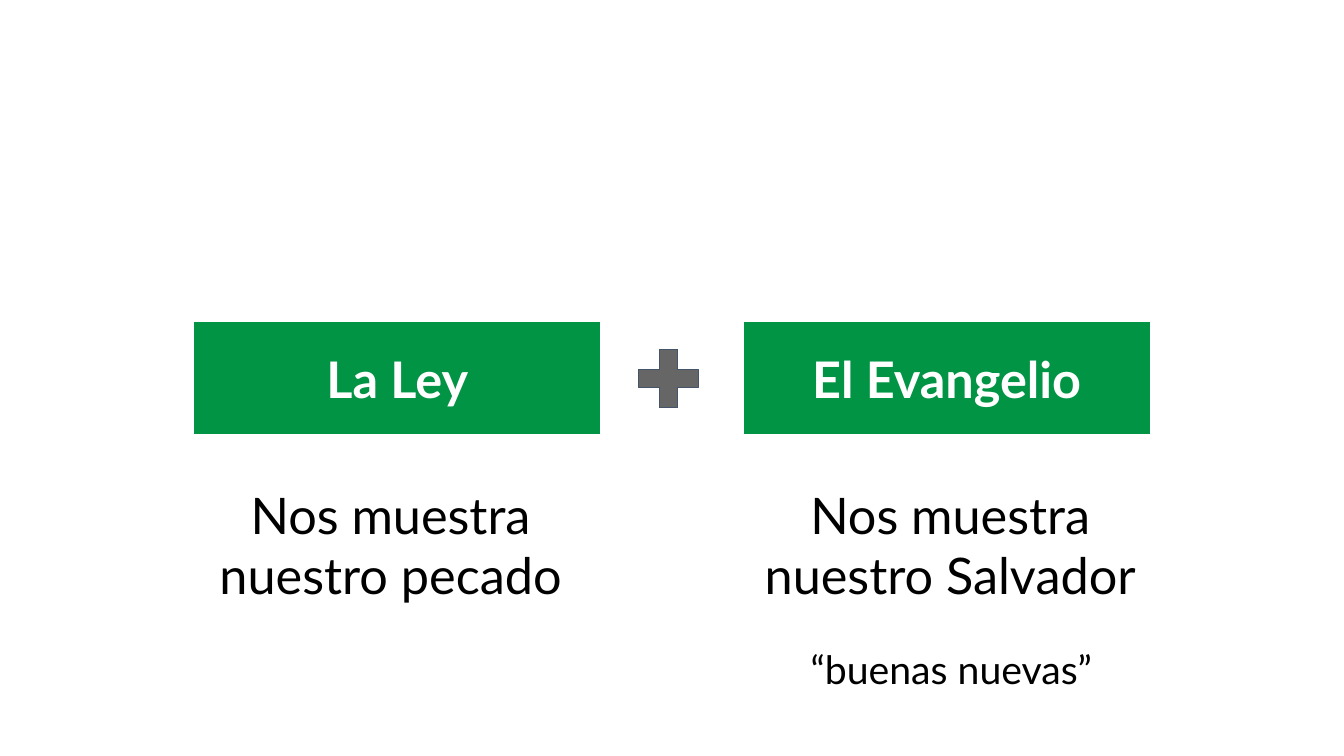
from dataclasses import dataclass
from pptx import Presentation
from pptx.dml.color import RGBColor as RGB
from pptx.enum.shapes import MSO_SHAPE as SHAPE
from pptx.enum.text import MSO_ANCHOR as ANCHOR, PP_ALIGN as ALIGN
from pptx.util import Inches, Pt


@dataclass
class Theme:
    green: RGB = RGB(0x00, 0x94, 0x44)
    gray: RGB = RGB(0x66, 0x66, 0x66)
    slate: RGB = RGB(0x44, 0x54, 0x6A)
    white: RGB = RGB(0xFF, 0xFF, 0xFF)
    black: RGB = RGB(0x00, 0x00, 0x00)
    font: str = "Lato"
    large: Pt = Pt(36)
    small: Pt = Pt(28)


theme = Theme()


def paint(shape, fill, line):
    shape.shadow.inherit = False
    shape.fill.solid()
    shape.fill.fore_color.rgb = fill
    shape.line.color.rgb = line
    shape.line.width = Pt(0.75)


def write(shape, text, size, color, anchor=ANCHOR.TOP, bold=False):
    frame = shape.text_frame
    frame.word_wrap = True
    frame.vertical_anchor = anchor
    frame.margin_left = frame.margin_right = Inches(0.1)
    frame.margin_top = frame.margin_bottom = Inches(0.1)
    para = frame.paragraphs[0]
    para.text = text
    para.alignment = ALIGN.CENTER
    para.font.name = theme.font
    para.font.size = size
    para.font.bold = bold
    para.font.color.rgb = color


deck = Presentation()
deck.slide_width = Inches(13.33)
deck.slide_height = Inches(7.5)
slide = deck.slides.add_slide(deck.slide_layouts[6])
shapes = slide.shapes

for label, left in [("La Ley", 1.92), ("El Evangelio", 7.37)]:
    box = shapes.add_shape(
        SHAPE.RECTANGLE, Inches(left), Inches(3.19), Inches(4.04), Inches(1.12)
    )
    paint(box, theme.green, theme.white)
    write(box, label, theme.large, theme.white, ANCHOR.MIDDLE, True)

plus = shapes.add_shape(
    SHAPE.MATH_PLUS, Inches(6.23), Inches(3.36), Inches(0.8), Inches(0.79)
)
plus.adjustments[0] = 0.235
paint(plus, theme.gray, theme.slate)

notes = [
    ("Nos muestra nuestro pecado", 2.06, 4.7, 3.63, theme.large),
    ("Nos muestra nuestro Salvador", 7.37, 4.7, 4.11, theme.large),
    ("“buenas nuevas”", 7.82, 6.3, 3.23, theme.small),
]
for text, left, top, width, size in notes:
    note = shapes.add_textbox(Inches(left), Inches(top), Inches(width), Inches(0.4))
    write(note, text, size, theme.black)

deck.save("out.pptx")
